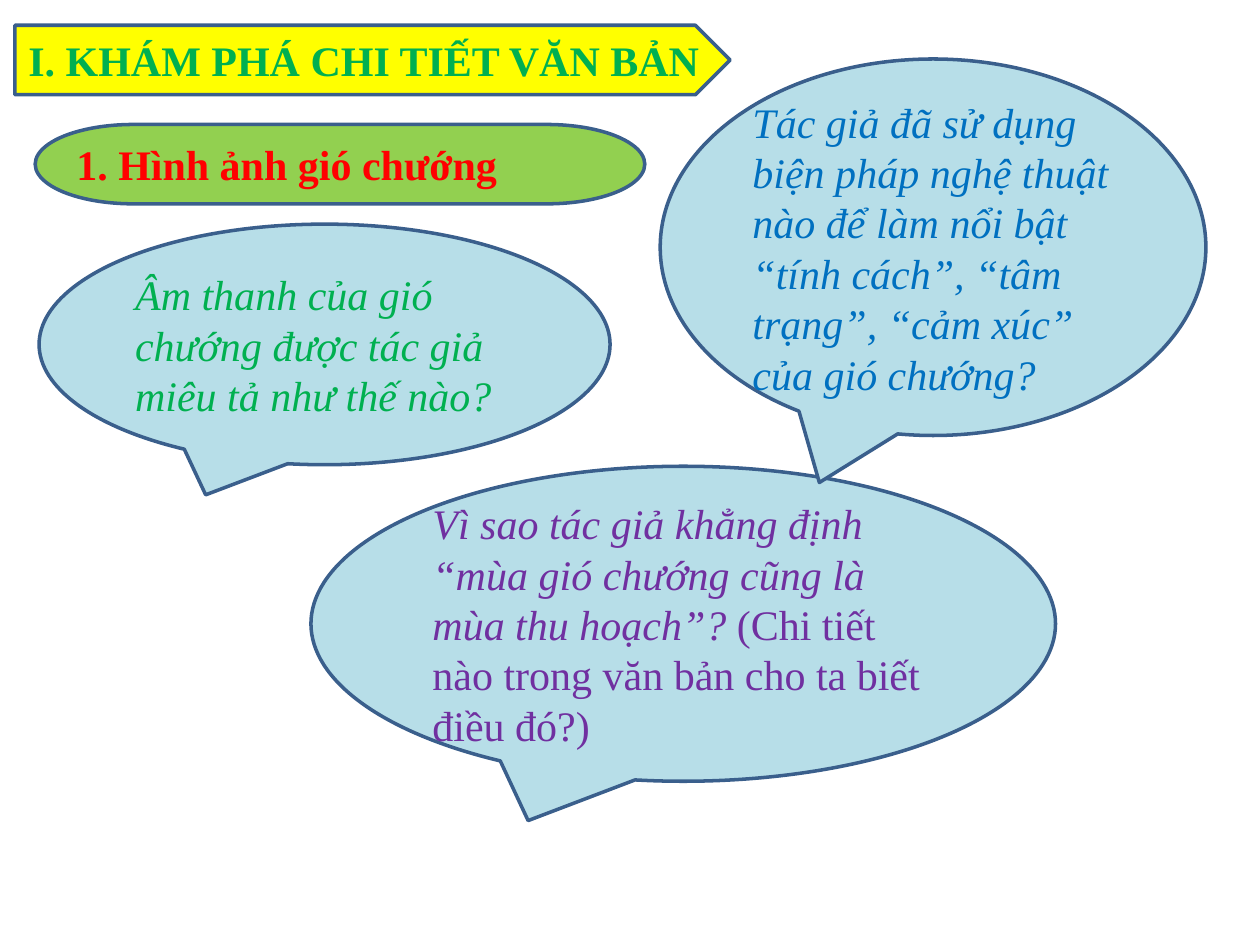
from pptx import Presentation
from pptx.dml.color import RGBColor
from pptx.enum.shapes import MSO_SHAPE
from pptx.enum.text import MSO_ANCHOR, PP_ALIGN
from pptx.util import Cm, Pt

THEME = {
    "font": "Times New Roman", "size": 24, "edge": "3A5F8C", "width": 2,
    "yellow": "FFFF00", "lime": "92D050", "sky": "B7DEE8",
    "green": "00B050", "red": "FF0000", "purple": "7030A0", "blue": "0070C0",
}

HEADS = [
    (MSO_SHAPE.PENTAGON, (0.3, 0.51, 14.42, 1.4), "yellow",
     "I. KHÁM PHÁ CHI TIẾT VĂN BẢN", "green", PP_ALIGN.CENTER),
    (MSO_SHAPE.FLOWCHART_TERMINATOR, (0.71, 2.51, 12.29, 1.6), "lime",
     "1. Hình ảnh gió chướng", "red", PP_ALIGN.LEFT),
]

ASKS = [
    ((0.79, 4.52, 11.51, 4.85), "green",
     "Âm thanh của gió chướng được tác giả miêu tả như thế nào?", ""),
    ((6.27, 9.4, 15.01, 6.35), "purple",
     "Vì sao tác giả khẳng định “mùa gió chướng cũng là mùa thu hoạch”? ",
     "(Chi tiết nào trong văn bản cho ta biết điều đó?)"),
    ((13.31, 1.19, 11, 7.59), "blue",
     "Tác giả đã sử dụng biện pháp nghệ thuật nào để làm nổi bật "
     "“tính cách”, “tâm trạng”, “cảm xúc” của gió chướng?", ""),
]


def tint(name):
    return RGBColor.from_string(THEME[name])


def write(para, text, *, color, bold=False, italic=False):
    run = para.add_run()
    run.text = text
    font = run.font
    font.name, font.size = THEME["font"], Pt(THEME["size"])
    font.bold, font.italic = bold, italic
    font.color.rgb = tint(color)


def panel(slide, kind, box, fill, align=PP_ALIGN.LEFT):
    shape = slide.shapes.add_shape(kind, *map(Cm, box))
    shape.shadow.inherit = False
    shape.fill.solid()
    shape.fill.fore_color.rgb = tint(fill)
    shape.line.color.rgb = tint("edge")
    shape.line.width = Pt(THEME["width"])
    frame = shape.text_frame
    frame.word_wrap = True
    frame.vertical_anchor = MSO_ANCHOR.MIDDLE
    para = frame.paragraphs[0]
    para.alignment = align
    return para


def main():
    """Build the slide of two headings and three question bubbles."""
    deck = Presentation()
    deck.slide_width, deck.slide_height = Cm(25.4), Cm(19.05)
    slide = deck.slides.add_slide(deck.slide_layouts[6])
    for kind, box, fill, text, color, align in HEADS:
        para = panel(slide, kind, box, fill, align)
        write(para, text, color=color, bold=True)
    for box, color, ask, hint in ASKS:
        para = panel(slide, MSO_SHAPE.OVAL_CALLOUT, box, "sky")
        write(para, ask, color=color, italic=True)
        if hint:
            write(para, hint, color=color)
    deck.save("out.pptx")


if __name__ == "__main__":
    main()
